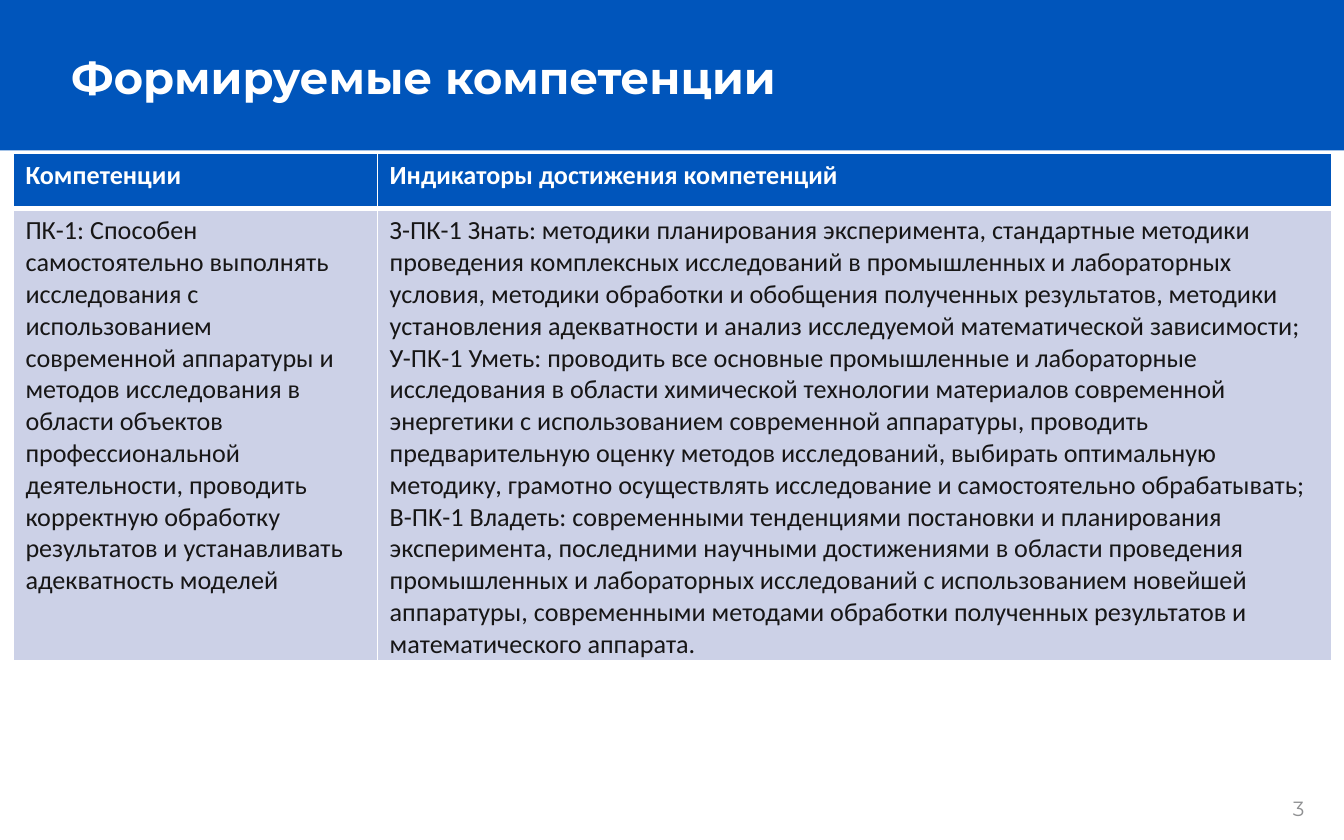
from lxml.etree import SubElement
from pptx import Presentation
from pptx.dml.color import RGBColor
from pptx.enum.shapes import MSO_SHAPE
from pptx.enum.text import MSO_ANCHOR, PP_ALIGN
from pptx.oxml.ns import qn
from pptx.util import Inches, Pt

BLUE = RGBColor(0x00, 0x55, 0xBB)
LAVENDER = RGBColor(0xCC, 0xD1, 0xE7)
WHITE = RGBColor(0xFF, 0xFF, 0xFF)
DARK = RGBColor(0x17, 0x16, 0x16)
GRAY = RGBColor(0x8F, 0x90, 0x92)

# Content
TITLE = "Формируемые компетенции"
PAGE = "3"
COMPETENCY = (
    "ПК-1: Способен самостоятельно выполнять исследования с использованием "
    "современной аппаратуры и методов исследования в области объектов "
    "профессиональной деятельности, проводить корректную обработку "
    "результатов и устанавливать адекватность моделей"
)
INDICATORS = [
    "З-ПК-1 Знать: методики планирования эксперимента, стандартные методики "
    "проведения комплексных исследований в промышленных и лабораторных "
    "условия, методики обработки и обобщения полученных результатов, "
    "методики установления адекватности и анализ исследуемой математической "
    "зависимости;",
    "У-ПК-1 Уметь: проводить все основные промышленные и лабораторные "
    "исследования в области химической технологии материалов современной "
    "энергетики с использованием современной аппаратуры, проводить "
    "предварительную оценку методов исследований, выбирать оптимальную "
    "методику, грамотно осуществлять исследование и самостоятельно "
    "обрабатывать;",
    "В-ПК-1 Владеть: современными тенденциями постановки и планирования "
    "эксперимента, последними научными достижениями в области проведения "
    "промышленных и лабораторных исследований с использованием новейшей "
    "аппаратуры, современными методами обработки полученных результатов и "
    "математического аппарата.",
]
ROWS = [
    ("Компетенции", "Индикаторы достижения компетенций"),
    (COMPETENCY, " ".join(INDICATORS)),
]
COL_WIDTHS = [2.71, 7.1]
ROW_HEIGHTS = [0.41, 3.36]


def write(tf, text, size, color, font="Montserrat", bold=False, align=PP_ALIGN.LEFT):
    p = tf.paragraphs[0]
    p.alignment = align
    r = p.add_run()
    r.text = text
    r.font.name, r.font.size, r.font.bold = font, Pt(size), bold
    r.font.color.rgb = color


def set_insets(tf):
    tf.margin_left = tf.margin_right = Inches(0.07)
    tf.margin_top = tf.margin_bottom = Inches(0.04)


def set_borders(cell, widths):
    """Draw white cell borders; widths maps a side (L, R, T, B) to points."""
    tcPr = cell._tc.get_or_add_tcPr()
    for i, (side, width) in enumerate(widths.items()):
        ln = SubElement(tcPr, qn(f"a:ln{side}"), w=str(Pt(width)))
        fill = SubElement(ln, qn("a:solidFill"))
        SubElement(fill, qn("a:srgbClr"), val=str(WHITE))
        tcPr.insert(i, ln)  # borders come before the cell fill


prs = Presentation()
prs.slide_width, prs.slide_height = Inches(10), Inches(6.25)
s = prs.slides.add_slide(prs.slide_layouts[5])

# Header band, placed behind the title
band = s.shapes.add_shape(MSO_SHAPE.RECTANGLE, 0, 0, prs.slide_width, Inches(1.12))
band.shadow.inherit = False
band.fill.solid()
band.fill.fore_color.rgb = BLUE
band.line.fill.background()
s.shapes._spTree.insert(2, band._element)

# Title
title = s.shapes.title
title.left, title.top = Inches(0.46), Inches(0.33)
title.width, title.height = Inches(9.09), Inches(0.48)
tf = title.text_frame
set_insets(tf)
tf.vertical_anchor = MSO_ANCHOR.MIDDLE
write(tf, TITLE, 24, WHITE, bold=True)

# Competency table
table = s.shapes.add_table(
    len(ROWS), len(COL_WIDTHS), Inches(0.1), Inches(1.14),
    Inches(sum(COL_WIDTHS)), Inches(sum(ROW_HEIGHTS)),
).table
for col, width in zip(table.columns, COL_WIDTHS):
    col.width = Inches(width)
for i, (row, height) in enumerate(zip(ROWS, ROW_HEIGHTS)):
    table.rows[i].height = Inches(height)
    header = i == 0
    for j, text in enumerate(row):
        cell = table.cell(i, j)
        cell.margin_left = cell.margin_right = Inches(0.09)
        cell.margin_top = Inches(0.05)
        cell.margin_bottom = Inches(0.05 if header else 0)
        cell.fill.solid()
        cell.fill.fore_color.rgb = BLUE if header else LAVENDER
        set_borders(cell, {"L": 1, "R": 1, "T": 1 if header else 3, "B": 3 if header else 1})
        write(cell.text_frame, text, 14, WHITE if header else DARK,
              font="Calibri", bold=header)

# Page number
tf = s.shapes.add_textbox(Inches(9.55), Inches(5.88), Inches(0.35), Inches(0.26)).text_frame
set_insets(tf)
tf.word_wrap = False
write(tf, PAGE, 11, GRAY)

prs.save("out.pptx")
